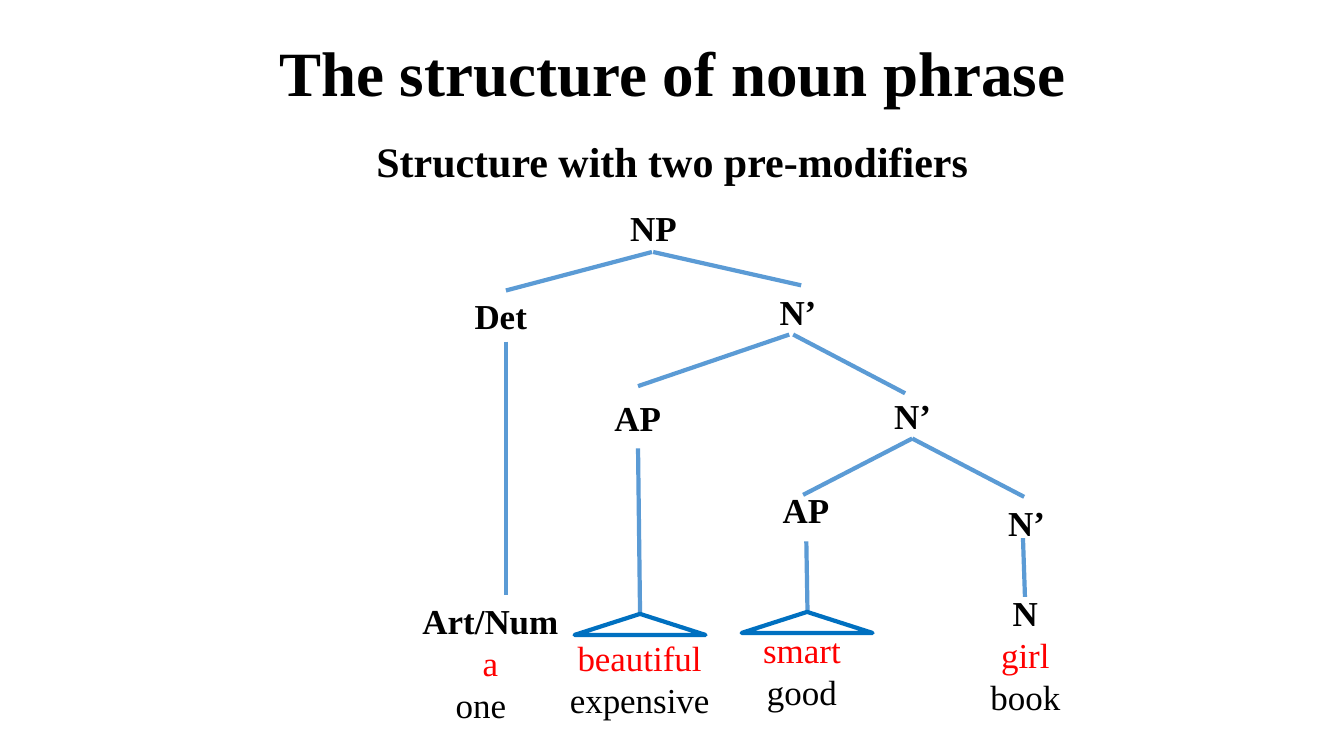
from lxml.etree import SubElement
from pptx import Presentation
from pptx.dml.color import RGBColor
from pptx.enum.shapes import MSO_CONNECTOR, MSO_SHAPE
from pptx.enum.text import MSO_ANCHOR, PP_ALIGN
from pptx.oxml.ns import qn
from pptx.util import Cm, Pt

FONT = "Times New Roman"
COLORS = {"text": "000000", "example": "FF0000", "branch": "5B9BD5", "triangle": "0070C0"}

# Headings: text, size, (left, top, width, height) in cm
TITLE = ("The structure of noun phrase", 45, (2.34, 1.02, 29.21, 1.78))
SUBTITLE = ("Structure with two pre-modifiers", 30, (2.34, 3.43, 29.21, 15.04))

# Category labels: text, centre x, centre y, width, height in cm
CATEGORIES = [
    ("NP", 16.47, 5.73, 2.21, 1.3),
    ("Det", 12.62, 7.96, 3.99, 1.3),
    ("N’", 20.11, 7.84, 3.99, 1.3),
    ("AP", 16.07, 10.52, 2.21, 1.57),
    ("N’", 23.0, 10.46, 2.97, 1.57),
    ("AP", 20.31, 12.85, 2.21, 1.57),
    ("N’", 25.87, 13.16, 2.21, 1.57),
]

# Words under the tree: (text, role, right indent in cm) lines, then the box as above
WORDS = [
    ([("Art/Num", "label", 0), ("a", "example", 0), ("one", "text", 0.48)],
     12.36, 16.69, 4.85, 2.69),
    ([("beautiful", "example", 0), ("expensive", "text", 0)], 16.12, 17.09, 4.39, 2.49),
    ([("smart", "example", 0.22), ("good", "text", 0)], 20.32, 16.9, 3.3, 2.0),
    ([("N", "label", 0), ("girl", "example", 0), ("book", "text", 0)],
     25.84, 16.5, 2.87, 3.02),
]

# Branches: x1, y1, x2, y2 in cm
BRANCHES = [
    (16.43, 6.35, 12.75, 7.32), (16.46, 6.35, 20.19, 7.19),
    (19.89, 8.43, 16.08, 9.73), (19.99, 8.43, 22.81, 9.91),
    (22.99, 11.05, 20.24, 12.47), (22.99, 11.05, 25.81, 12.52),
    (25.78, 13.56, 25.83, 15.04), (12.75, 8.61, 12.75, 14.99),
    (16.08, 11.3, 16.13, 15.47), (20.32, 13.64, 20.35, 15.42),
]

# Triangles: apex x, apex y in cm
TRIANGLES = [(16.13, 15.47), (20.34, 15.42)]
TRIANGLE_WIDTH, TRIANGLE_HEIGHT = 3.3, 0.53


def color(role):
    return RGBColor.from_string(COLORS[role])


def style(paragraph, size, bold, role="text"):
    paragraph.alignment = PP_ALIGN.CENTER
    for run in paragraph.runs:
        run.font.name = FONT
        run.font.size = Pt(size)
        run.font.bold = bold
        run.font.color.rgb = color(role)


def fill_heading(holder, content):
    text, size, box = content
    holder.left, holder.top, holder.width, holder.height = map(Cm, box)
    holder.text_frame.text = text
    paragraph = holder.text_frame.paragraphs[0]
    paragraph.line_spacing = 0.9
    style(paragraph, size, True)
    return paragraph


def add_node(lines, x, y, width, height):
    node = slide.shapes.add_textbox(
        Cm(x - width / 2), Cm(y - height / 2), Cm(width), Cm(height))
    frame = node.text_frame
    frame.word_wrap = True
    frame.vertical_anchor = MSO_ANCHOR.MIDDLE
    frame.text = "\n".join(text for text, _, _ in lines)
    for paragraph, (_, role, indent) in zip(frame.paragraphs, lines):
        is_label = role == "label"
        style(paragraph, 25, is_label, "text" if is_label else role)
        if indent:
            paragraph._p.get_or_add_pPr().set("marR", str(int(Cm(indent))))


presentation = Presentation()
presentation.slide_width, presentation.slide_height = Cm(33.87), Cm(19.05)
slide = presentation.slides.add_slide(presentation.slide_layouts[1])

# Title and subtitle
fill_heading(slide.shapes.title, TITLE)
slide.shapes.title.text_frame.vertical_anchor = MSO_ANCHOR.MIDDLE
subtitle = fill_heading(slide.placeholders[1], SUBTITLE)
subtitle.space_before = Pt(10)
subtitle_format = subtitle._p.get_or_add_pPr()
subtitle_format.set("marL", "0")
subtitle_format.set("indent", "0")
SubElement(subtitle_format, qn("a:buNone"))

# Tree branches
for x1, y1, x2, y2 in BRANCHES:
    branch = slide.shapes.add_connector(
        MSO_CONNECTOR.STRAIGHT, Cm(x1), Cm(y1), Cm(x2), Cm(y2))
    branch.line.color.rgb = color("branch")
    branch.line.width = Pt(3)
    SubElement(branch._element.spPr, qn("a:effectLst"))

# Triangles above the adjective phrases
for x, y in TRIANGLES:
    triangle = slide.shapes.add_shape(
        MSO_SHAPE.ISOSCELES_TRIANGLE, Cm(x - TRIANGLE_WIDTH / 2), Cm(y),
        Cm(TRIANGLE_WIDTH), Cm(TRIANGLE_HEIGHT))
    triangle.shadow.inherit = False
    triangle.fill.background()
    triangle.line.color.rgb = color("triangle")
    triangle.line.width = Pt(3)

# Category labels and words
for label, *box in CATEGORIES:
    add_node([(label, "label", 0)], *box)
for lines, *box in WORDS:
    add_node(lines, *box)

presentation.save("out.pptx")
